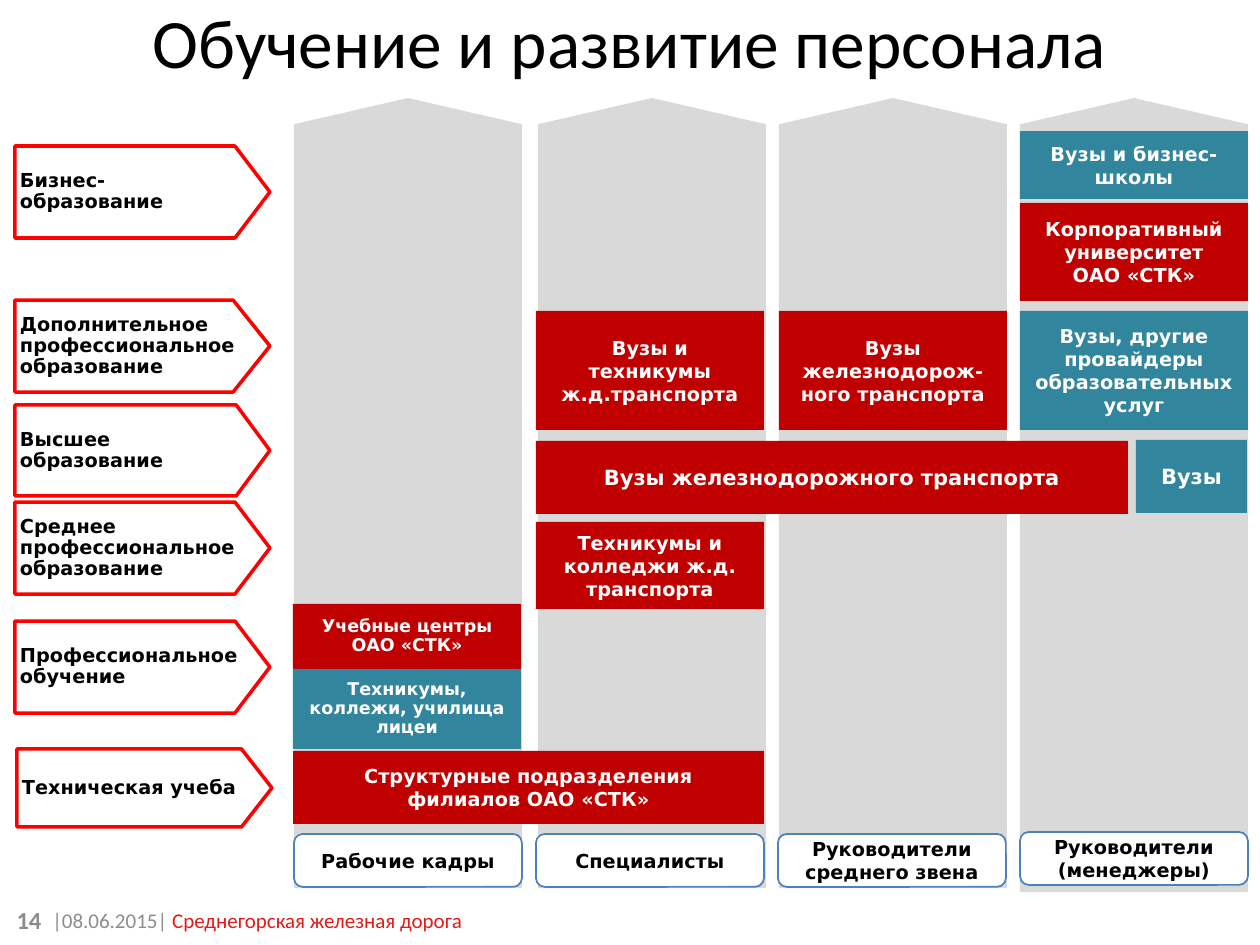
from pptx import Presentation, util as u
from pptx.dml import color
from pptx.enum import shapes, text

PX = 9144000 / 1260
RED, TEAL, GRAY, WHITE, BLACK = "C00000", "31859C", "D9D9D9", "FFFFFF", "000000"
LABEL_FONT = "DejaVu Sans"


def rgb(value):
    return color.RGBColor.from_string(value)


def write(shape, lines, size, font, align="CENTER", bold=False, inset=None, spacing=None):
    frame = shape.text_frame
    frame.word_wrap = True
    frame.auto_size = text.MSO_AUTO_SIZE.NONE
    frame.vertical_anchor = text.MSO_ANCHOR.MIDDLE
    if inset is not None:
        frame.margin_left = frame.margin_right = round(inset * PX)
        frame.margin_top = frame.margin_bottom = round(inset * PX)
    for index, runs in enumerate(lines):
        paragraph = frame.paragraphs[0] if index == 0 else frame.add_paragraph()
        paragraph.alignment = getattr(text.PP_ALIGN, align)
        if spacing:
            paragraph.line_spacing = spacing
        for words, fill in runs:
            for part, piece in enumerate(words.split("\n")):
                if part:
                    paragraph.add_line_break()
                run = paragraph.add_run()
                run.text = piece
                run.font.size = u.Pt(size)
                run.font.name = font
                run.font.bold = bold
                run.font.color.rgb = rgb(fill)


def add_box(kind, box, fill, line=None, line_width=1):
    shape = slide.shapes.add_shape(kind, *[round(n * PX) for n in box])
    shape.shadow.inherit = False
    shape.fill.solid()
    shape.fill.fore_color.rgb = rgb(fill)
    if line:
        shape.line.color.rgb = rgb(line)
        shape.line.width = u.Pt(line_width)
    else:
        shape.line.fill.background()
    return shape


presentation = Presentation()
presentation.slide_width = u.Inches(10)
presentation.slide_height = u.Inches(7.5)
slide = presentation.slides.add_slide(presentation.slide_layouts[5])

title = slide.shapes.title
title.left, title.top, title.width, title.height = 0, 0, round(1260 * PX), round(81 * PX)
write(title, [[("Обучение и развитие персонала", BLACK)]], 39.6, "Calibri")

footers = [
    ((0, 895, 58, 50), [("14", "8C8C8C")], 14, "CENTER", True),
    ((40, 895, 896, 50),
     [("|08.06.2015| ", "8C8C8C"), ("Среднегорская железная дорога", "E21A1A")], 12, "LEFT", False),
]
for box, runs, size, align, bold in footers:
    footer = slide.shapes.add_textbox(*[round(n * PX) for n in box])
    write(footer, [runs], size, "Calibri", align, bold)

for left, top, length in [(13, 379, 790), (257, 379, 790), (498, 379, 790), (737, 381, 794)]:
    column = add_box(shapes.MSO_SHAPE.PENTAGON, (left, top, length, 228), GRAY)
    column.adjustments[0] = 0.115
    column.rotation = 270

levels = [
    (15, 146, 92, 0.38, ["Бизнес-образование"]),
    (15, 300, 92, 0.4, ["Дополнительное профессиональное образование"]),
    (15, 405, 91, 0.37, ["Высшее", "образование"]),
    (15, 502, 92, 0.38, ["Среднее", "профессиональное образование"]),
    (15, 621, 92, 0.38, ["Профессиональное обучение"]),
    (17, 749, 78, 0.39, ["Техническая учеба"]),
]
for left, top, height, point, lines in levels:
    level = add_box(shapes.MSO_SHAPE.PENTAGON, (left, top, 255, height), WHITE, "FF0000", 2)
    level.adjustments[0] = point
    write(level, [[(line, BLACK)] for line in lines], 11, LABEL_FONT, "LEFT", True, 5, 0.9)

staff_groups = [
    (294, 834, "Рабочие кадры"),
    (536, 834, "Специалисты"),
    (778, 834, "Руководители среднего звена"),
    (1020, 832, "Руководители (менеджеры)"),
]
for left, top, name in staff_groups:
    group = add_box(shapes.MSO_SHAPE.ROUNDED_RECTANGLE, (left, top, 228, 53), WHITE, "4F81BD")
    write(group, [[(name, BLACK)]], 11, LABEL_FONT, bold=True)

providers = [
    ((293, 751, 471, 73), RED, 11, None, None,
     ["Структурные подразделения", "филиалов ОАО «СТК»"]),
    ((293, 604, 228, 65), RED, 10, 5, 0.9, ["Учебные центры\nОАО «СТК»"]),
    ((293, 669, 228, 80), TEAL, 10, 5, 0.9, ["Техникумы, коллежи, училища лицеи"]),
    ((536, 522, 228, 87), RED, 11, None, None, ["Техникумы и колледжи ж.д. транспорта"]),
    ((536, 441, 592, 73), RED, 12, None, None, ["Вузы железнодорожного транспорта"]),
    ((536, 311, 228, 119), RED, 11, None, None, ["Вузы и техникумы ж.д.транспорта"]),
    ((779, 311, 228, 119), RED, 11, None, None, ["Вузы", "железнодорож-ного транспорта"]),
    ((1020, 311, 228, 119), TEAL, 11, None, None,
     ["Вузы, другие провайдеры образовательных услуг"]),
    ((1020, 203, 228, 98), RED, 11, None, None, ["Корпоративный университет\nОАО «СТК»"]),
    ((1020, 131, 228, 68), TEAL, 11, 0, None, ["Вузы и бизнес-школы"]),
    ((1136, 440, 111, 73), TEAL, 12, None, None, ["Вузы"]),
]
for box, fill, size, inset, spacing, lines in providers:
    provider = add_box(shapes.MSO_SHAPE.RECTANGLE, box, fill)
    write(provider, [[(line, WHITE)] for line in lines], size, LABEL_FONT, "CENTER", True, inset, spacing)

presentation.save("out.pptx")
